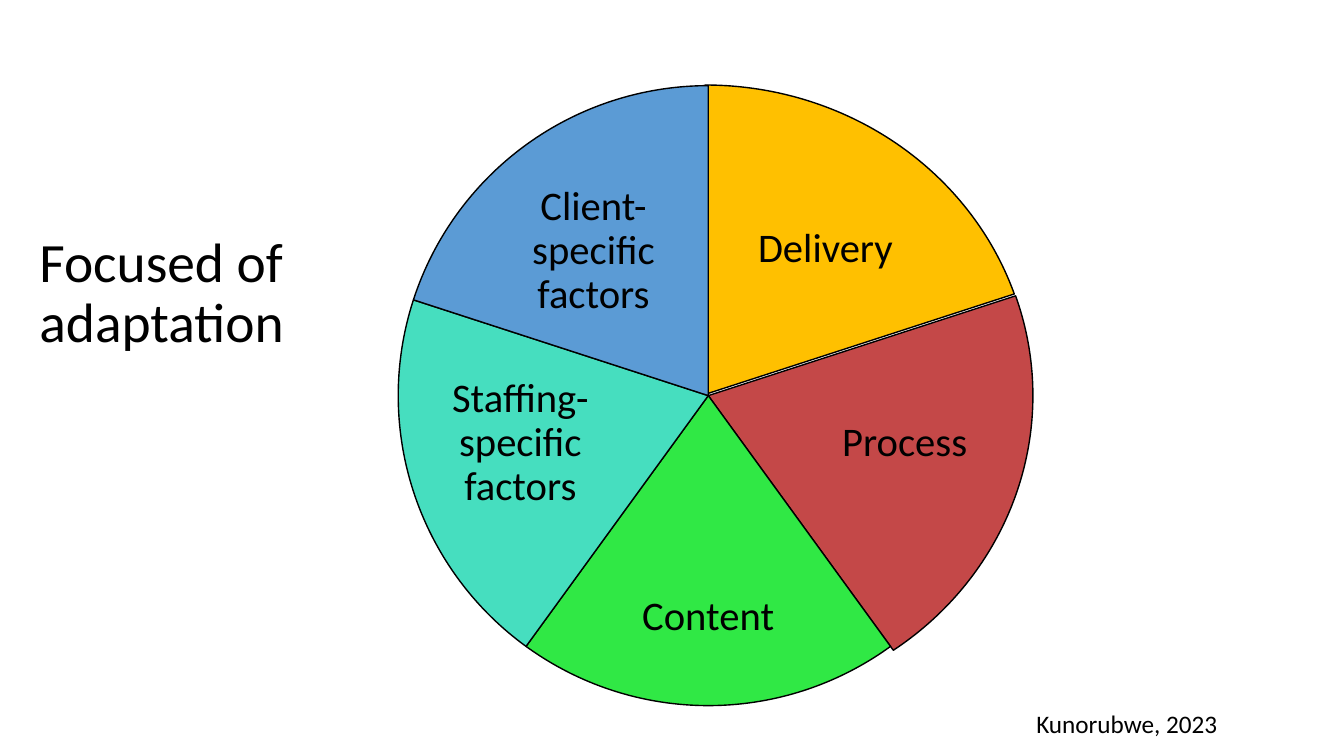
from dataclasses import dataclass

from pptx import Presentation
from pptx.dml.color import RGBColor
from pptx.enum.shapes import MSO_SHAPE as SHAPE
from pptx.enum.text import MSO_ANCHOR as ANCHOR, MSO_AUTO_SIZE as AUTO, PP_ALIGN as ALIGN
from pptx.util import Inches, Pt


@dataclass(frozen=True)
class Theme:
    font: str = "Calibri"
    ink: str = "000000"
    paper: str = "FFFFFF"
    title: float = 39.6
    label: float = 29
    source: float = 18
    outline: float = 1


@dataclass(frozen=True)
class Box:
    x: float
    y: float
    w: float
    h: float

    def share(self, dx, dy, w, h):
        """Box of w by h percent of this one, its centre moved by dx, dy percent."""
        sw, sh = self.w * w / 100, self.h * h / 100
        return Box(self.x + self.w * (50 + dx) / 100 - sw / 2,
                   self.y + self.h * (50 + dy) / 100 - sh / 2, sw, sh)

    def emu(self):
        return [Inches(v) for v in (self.x, self.y, self.w, self.h)]


THEME = Theme()
WIDTH, HEIGHT = 13.33, 7.5
FIRST_ANGLE = 270

# name, colour, slice (dx, dy, w, h) and label (dx, dy, w, h) in percent of the wheel
FULL = (0, 0, 100, 100)
FACTORS = [
    ("Delivery", "FFC000", (-0.5, -0.2, 105.4, 99.8), (18.9, -23.6, 35.8, 23.3)),
    ("Process", "C44848", (0, 0, 104.7, 100), (31.7, 7.7, 31.2, 25)),
    ("Content", "30E845", FULL, (0, 35.7, 35.8, 21.5)),
    ("Staffing-specific factors", "46DEBF", FULL, (-30.3, 7.7, 29.8, 25)),
    ("Client-specific factors", "5B9BD5", FULL, (-18.5, -23.3, 34, 23.3)),
]


def rgb(value):
    return RGBColor.from_string(value)


def write(tf, text, size, align=ALIGN.LEFT, spacing=0.9):
    tf.text = text
    p = tf.paragraphs[0]
    p.alignment, p.line_spacing = align, spacing
    p.font.name, p.font.size = THEME.font, Pt(size)
    p.font.color.rgb = rgb(THEME.ink)


def add_title(slide, box, text):
    sp = slide.shapes.title
    sp.left, sp.top, sp.width, sp.height = box.emu()
    tf = sp.text_frame
    tf.auto_size, tf.vertical_anchor = AUTO.NONE, ANCHOR.MIDDLE
    tf.margin_bottom = Inches(0.65)
    write(tf, text, THEME.title)


def add_slice(shapes, box, color, start, sweep):
    sp = shapes.add_shape(SHAPE.PIE, *box.emu())
    # One unit of a pie adjustment is 100000 / 60000 of a degree
    for i, angle in enumerate((start, start + sweep)):
        sp.adjustments[i] = angle % 360 * 0.6
    sp.shadow.inherit = False
    sp.fill.solid()
    sp.fill.fore_color.rgb = rgb(color)
    sp.line.color.rgb = rgb(THEME.ink)
    sp.line.width = Pt(THEME.outline)


def add_label(shapes, box, text):
    tf = shapes.add_textbox(*box.emu()).text_frame
    tf.word_wrap, tf.vertical_anchor = True, ANCHOR.MIDDLE
    tf.margin_left = tf.margin_right = tf.margin_top = tf.margin_bottom = Inches(0.04)
    write(tf, text, THEME.label, ALIGN.CENTER)


def add_wheel(slide, box, factors):
    shapes = slide.shapes.add_group_shape().shapes
    sweep = 360 / len(factors)
    for i, (name, color, wedge, label) in enumerate(factors):
        add_slice(shapes, box.share(*wedge), color, FIRST_ANGLE + i * sweep, sweep)
        add_label(shapes, box.share(*label), name)


def add_source(slide, box, text):
    sp = slide.shapes.add_textbox(*box.emu())
    sp.fill.solid()
    sp.fill.fore_color.rgb = rgb(THEME.paper)
    tf = sp.text_frame
    tf.word_wrap, tf.auto_size = False, AUTO.SHAPE_TO_FIT_TEXT
    write(tf, text, THEME.source, spacing=1)


def main():
    prs = Presentation()
    prs.slide_width, prs.slide_height = Inches(WIDTH), Inches(HEIGHT)
    slide = prs.slides.add_slide(prs.slide_layouts.get_by_name("Title Only"))
    add_title(slide, Box(0.29, 2.5, 3.28, 1.45), "Focused of adaptation")
    add_wheel(slide, Box(3.95, 0.85, 6.15, 6.15), FACTORS)
    add_source(slide, Box(10.18, 6.98, 2.02, 0.4), "Kunorubwe, 2023")
    prs.save("out.pptx")


if __name__ == "__main__":
    main()
